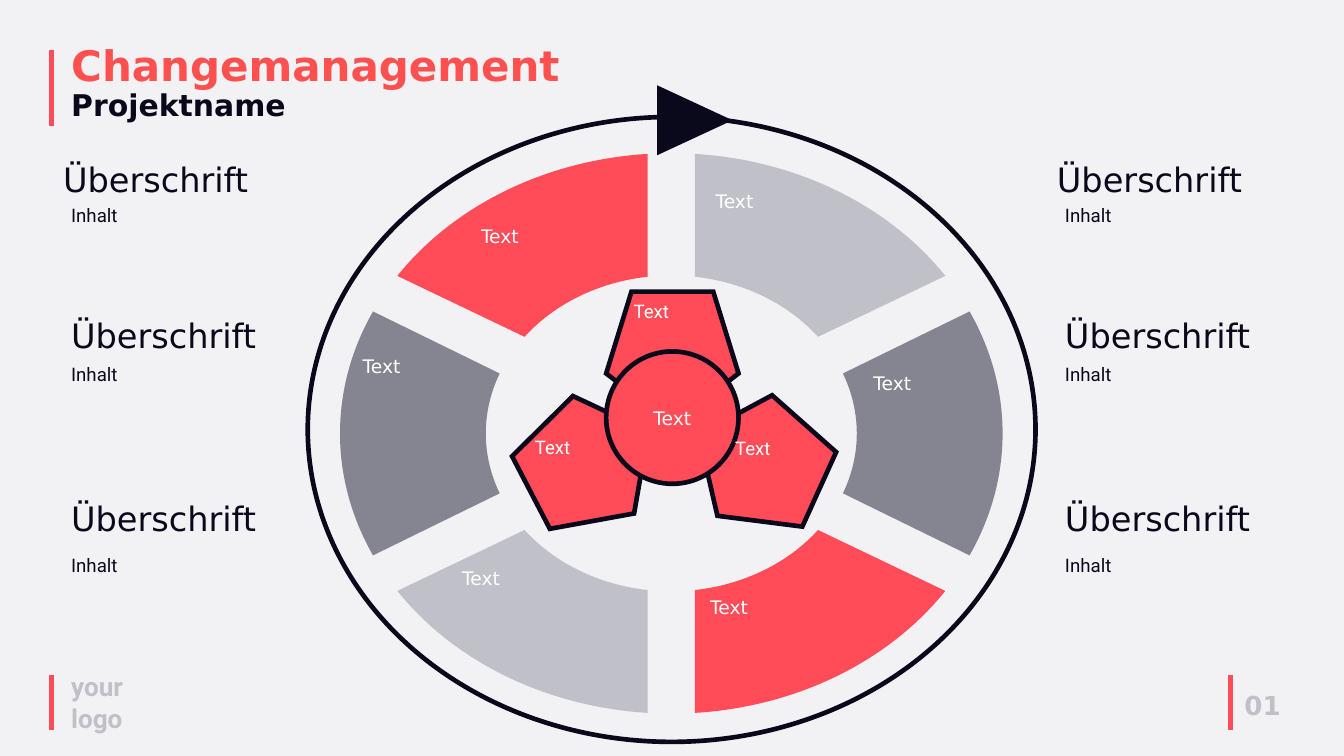
"""Build the change management wheel slide."""
from dataclasses import dataclass
from math import cos, radians, sin, tan

from lxml import etree
from pptx import Presentation
from pptx.dml.color import RGBColor as Rgb
from pptx.enum import shapes as kinds, text as txt
from pptx.oxml.ns import qn
from pptx.util import Inches, Pt


@dataclass(frozen=True)
class Theme:
    red: str = "FF4C58"
    title: str = "FF5050"
    dark: str = "0A091B"
    mid: str = "858591"
    light: str = "C0C0C8"
    white: str = "FFFFFF"
    back: str = "F2F2F5"
    sans: str = "DejaVu Sans"
    body: str = "Roboto"
    huge: int = 45
    head: int = 36
    sub: int = 32
    foot: int = 28
    small: int = 20
    line: int = 5


look = Theme()


def write(words, *, box=None, frame=None, size=look.small, font=look.sans,
          color=look.dark, bold=False, align=txt.PP_ALIGN.LEFT):
    if box:
        frame = slide.shapes.add_textbox(*map(Inches, box)).text_frame
        frame.auto_size = txt.MSO_AUTO_SIZE.SHAPE_TO_FIT_TEXT
    frame.word_wrap = True
    par = frame.paragraphs[0]
    par.alignment = align
    run = par.add_run()
    run.text = words
    run.font.size, run.font.name, run.font.bold = Pt(size), font, bold
    run.font.color.rgb = Rgb.from_string(color)


def paint(shape, fill=None, line=None, turn=0):
    shape.shadow.inherit = False
    shape.rotation = turn
    if fill:
        shape.fill.solid()
        shape.fill.fore_color.rgb = Rgb.from_string(fill)
    else:
        shape.fill.background()
    if line:
        shape.line.color.rgb = Rgb.from_string(line)
        shape.line.width = Pt(look.line)
        edge = shape._element.spPr.find(qn("a:ln"))
        etree.SubElement(edge, qn("a:miter"), lim="800000")
    else:
        shape.line.fill.background()
    return shape


deck = Presentation()
deck.slide_width, deck.slide_height = Inches(20), Inches(11.25)
slide = deck.slides.add_slide(deck.slide_layouts[5])
slide.background.fill.solid()
slide.background.fill.fore_color.rgb = Rgb.from_string(look.back)
add = slide.shapes.add_shape
form = kinds.MSO_SHAPE

for x, top, end in [(0.77, 0.75, 1.88), (0.77, 10.05, 10.86), (18.31, 10.05, 10.86)]:
    bar = slide.shapes.add_connector(
        kinds.MSO_CONNECTOR.STRAIGHT, Inches(x), Inches(top), Inches(x), Inches(end))
    bar.line.color.rgb = Rgb.from_string(look.red)
    bar.line.width = Pt(look.line)
    etree.SubElement(bar._element.spPr, qn("a:effectLst"))

title = slide.shapes.title
title.left, title.top, title.width, title.height = map(Inches, (0.96, 0.62, 7.71, 1.27))
frame = title.text_frame
frame.auto_size = txt.MSO_AUTO_SIZE.SHAPE_TO_FIT_TEXT
frame.vertical_anchor = txt.MSO_ANCHOR.TOP
frame.paragraphs[0].line_spacing = 0.9
write("Changemanagement", frame=frame, size=look.huge, color=look.title, bold=True)
frame.paragraphs[0].add_line_break()
write("Projektname", frame=frame, size=look.sub, bold=True)

write("your logo", box=(0.96, 9.93, 1.19, 1.04), size=look.foot, font=look.body,
      color=look.light, bold=True)
write("01", box=(18.42, 10.21, 1.9, 0.57), size=look.foot, color=look.light, bold=True)

mid_x, mid_y = 9.99, 6.45
outer, inner = (4.93, 4.17), (2.76, 2.35)
parts = [
    (look.light, 1, (4.1, 55.8), (7.3, 52.3)),
    (look.mid, 2, (64.2, 115.8), (67.7, 112.3)),
    (look.red, 1, (124.2, 175.9), (127.7, 172.7)),
]
wheel = slide.shapes.add_group_shape()
for half in (0, 180):
    for color, count, far, near in parts:
        dots = []
        for (wide, high), (start, stop) in [(outer, far), (inner, near[::-1])]:
            sweep = radians(stop - start) / count
            pull = 4 / 3 * tan(sweep / 4)
            curve = [(0, 0)]
            for step in range(count):
                curve += [(step, pull), (step + 1, -pull), (step + 1, 0)]
            for step, reach in curve:
                turn = radians(half + start) + step * sweep
                dots.append((Inches(mid_x + wide * (sin(turn) + reach * cos(turn))),
                             Inches(mid_y - high * (cos(turn) - reach * sin(turn)))))
        pen = wheel.shapes.build_freeform(*dots[0])
        pen.add_line_segments(dots[1:], close=True)
        piece = paint(pen.convert_to_shape(), color)
        lines = list(piece._element.iter(qn("a:lnTo")))
        del lines[3 * count]
        for first in range(0, len(lines), 3):
            bend = etree.Element(qn("a:cubicBezTo"))
            lines[first].addprevious(bend)
            for line in lines[first:first + 3]:
                bend.append(line[0])
                line.getparent().remove(line)

side = 1.97
for x, y, turn in [(9.02, 4.34, 180), (10.31, 5.89, 294.4), (7.79, 5.89, 62.5)]:
    paint(add(form.REGULAR_PENTAGON, *map(Inches, (x, y, side, side))),
          look.red, look.dark, turn)
core = paint(add(form.OVAL, *map(Inches, (9.02, 5.23, side, side))), look.red, look.dark)
core.text_frame.vertical_anchor = txt.MSO_ANCHOR.MIDDLE
write("Text", frame=core.text_frame, color=look.white, align=txt.PP_ALIGN.CENTER)

paint(add(form.OVAL, *map(Inches, (4.58, 1.74, 10.83, 9.3))), line=look.dark)
paint(add(form.ISOSCELES_TRIANGLE, *map(Inches, (9.82, 1.23, 1.04, 1.12))),
      look.dark, turn=90)

for x, y in [(7.06, 3.29), (10.55, 2.78), (5.3, 5.23),
             (6.78, 8.38), (12.9, 5.48), (10.47, 8.82)]:
    write("Text", box=(x, y, 1.64, 0.77), color=look.white)
for x, y, width in [(9.33, 4.41, 1.33), (7.86, 6.44, 1.24), (10.84, 6.45, 1.24)]:
    write("Text", box=(x, y, width, 0.44), font=look.body, color=look.white)

for left in (0.96, 15.75):
    for shift, top, low in [(-0.12, 2.31, 2.99), (0, 4.64, 5.35), (0, 7.36, 8.2)]:
        write("Überschrift", box=(left + shift, top, 3.03, 0.71), size=look.head)
        write("Inhalt", box=(left, low, 2.77, 0.44), font=look.body)

deck.save("out.pptx")
